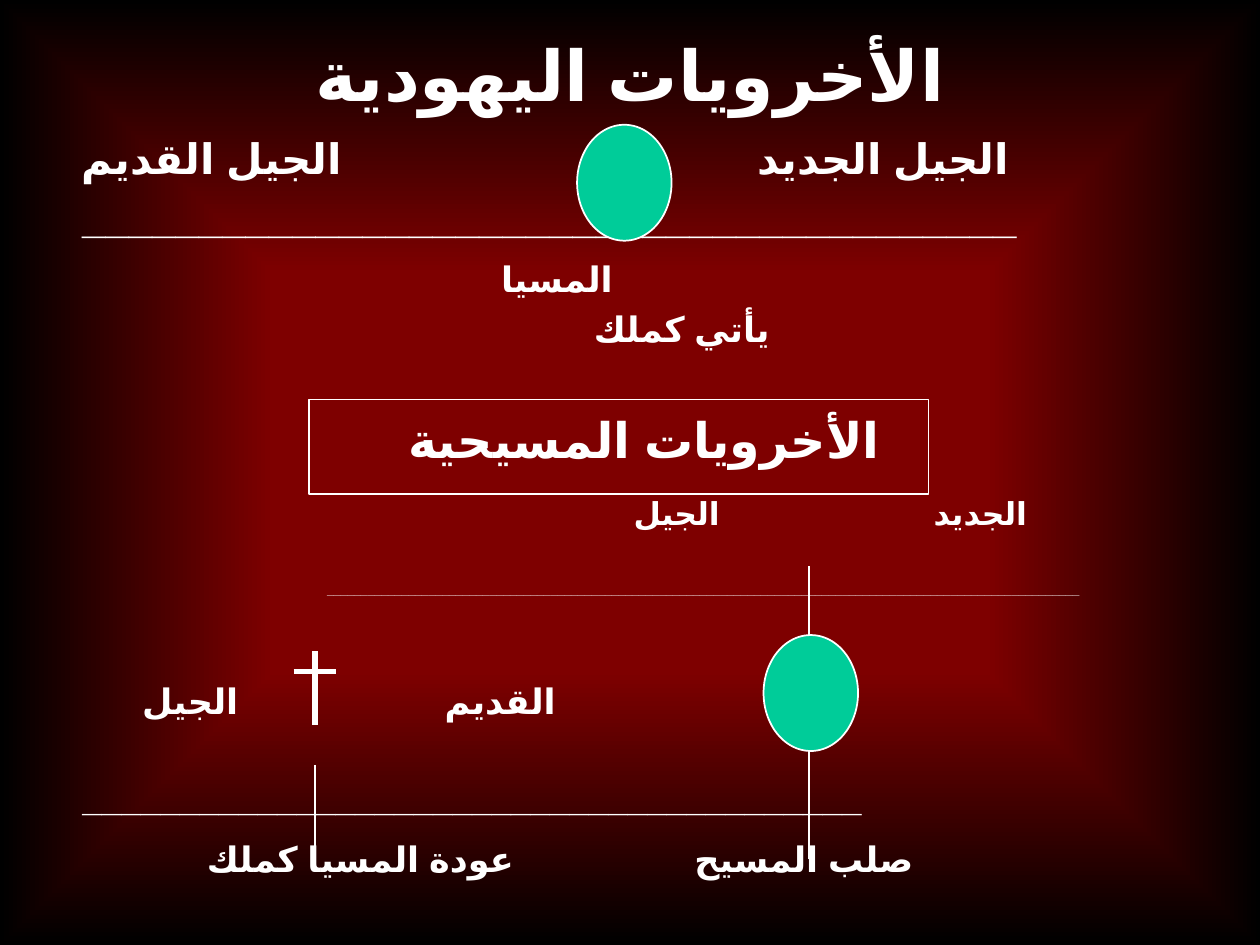
"""Build a slide comparing Jewish and Christian eschatology timelines."""
from lxml.etree import SubElement
from pptx import Presentation
from pptx.dml.color import RGBColor
from pptx.enum.lang import MSO_LANGUAGE_ID
from pptx.enum.shapes import MSO_CONNECTOR, MSO_SHAPE
from pptx.enum.text import MSO_ANCHOR, PP_ALIGN
from pptx.oxml import parse_xml
from pptx.oxml.ns import qn
from pptx.util import Inches, Pt

WHITE, GREEN, RED, BLACK = "FFFFFF", "00CC99", "7E0000", "000000"
FONT = "Arial"
LABEL_WIDTH, WIDE = 4.5, 8.5

TITLE = ("الأخرويات اليهودية", 5, 0.58, 40)
LABELS = [
    ("الجيل القديم", 1.68, 1.25, 24),
    ("الجيل الجديد", 7.01, 1.25, 24),
    ("المسيا", 4.42, 2.21, 20),
    ("يأتي كملك", 5.41, 2.61, 20),
    ("الأخرويات المسيحية", 5.11, 3.48, 28),
    ("الجديد", 7.78, 4.07, 18),
    ("الجيل", 5.37, 4.07, 18),
    ("القديم", 3.97, 5.56, 20),
    ("الجيل", 1.51, 5.56, 20),
    ("صلب المسيح", 6.38, 6.81, 20),
    ("عودة المسيا كملك", 2.86, 6.81, 20),
]
TIMELINES = [
    ("_" * 40, 4.36, 1.72, 24),
    ("_" * 111, 5.58, 4.68, 7),
    ("_" * 40, 3.75, 6.33, 20),
]
CROSS = [(2.33, 5.33, 2.67, 5.33, 3), (2.5, 5.17, 2.5, 5.75, 3)]
EVENT_MARKS = [(6.42, 6.82, 6.42, 4.49, 1), (2.5, 6.07, 2.5, 6.82, 1)]
HEADING_FRAME = (2.45, 3.17, 4.92, 0.75)
MESSIAH_OVALS = [(4.58, 0.99, 0.75, 0.92), (6.06, 5.04, 0.75, 0.92)]


def color(value):
    return RGBColor.from_string(value)


def set_background(slide):
    stops = "".join(
        f'<a:gs pos="{position * 1000}"><a:srgbClr val="{value}"/></a:gs>'
        for position, value in [(0, RED), (42, RED), (100, BLACK)]
    )
    center = 'l="50000" t="50000" r="50000" b="50000"'
    background = parse_xml(
        '<p:bg xmlns:p="http://schemas.openxmlformats.org/presentationml/2006/main"'
        ' xmlns:a="http://schemas.openxmlformats.org/drawingml/2006/main">'
        f'<p:bgPr><a:gradFill rotWithShape="0"><a:gsLst>{stops}</a:gsLst>'
        f'<a:path path="shape"><a:fillToRect {center}/></a:path></a:gradFill>'
        "<a:effectLst/></p:bgPr></p:bg>"
    )
    slide.element.find(qn("p:cSld")).insert(0, background)


def add_label(slide, words, center_x, center_y, size, width=LABEL_WIDTH):
    height = size / 40
    label = slide.shapes.add_textbox(
        Inches(center_x - width / 2), Inches(center_y - height / 2),
        Inches(width), Inches(height),
    )
    frame = label.text_frame
    frame.word_wrap = True
    frame.vertical_anchor = MSO_ANCHOR.MIDDLE
    frame.margin_top = frame.margin_bottom = 0
    paragraph = frame.paragraphs[0]
    paragraph.alignment = PP_ALIGN.CENTER
    paragraph._p.get_or_add_pPr().set("rtl", "1")
    run = paragraph.add_run()
    run.text = words
    font = run.font
    font.name, font.size, font.bold = FONT, Pt(size), True
    font.language_id = MSO_LANGUAGE_ID.ARABIC
    font.color.rgb = color(WHITE)
    SubElement(run._r.get_or_add_rPr(), qn("a:cs"), typeface=FONT)


def add_line(slide, x1, y1, x2, y2, weight):
    line = slide.shapes.add_connector(
        MSO_CONNECTOR.STRAIGHT, *(Inches(value) for value in (x1, y1, x2, y2))
    )
    line.line.color.rgb = color(WHITE)
    line.line.width = Pt(weight)
    SubElement(line._element.spPr, qn("a:effectLst"))


def add_outlined(slide, preset, box, fill=None):
    outlined = slide.shapes.add_shape(preset, *(Inches(value) for value in box))
    outlined.shadow.inherit = False
    if fill:
        outlined.fill.solid()
        outlined.fill.fore_color.rgb = color(fill)
    else:
        outlined.fill.background()
    outlined.line.color.rgb = color(WHITE)
    outlined.line.width = Pt(1)


def main():
    deck = Presentation()
    deck.slide_width, deck.slide_height = Inches(10), Inches(7.5)
    slide = deck.slides.add_slide(deck.slide_layouts[6])
    set_background(slide)
    for label in LABELS:
        add_label(slide, *label)
    for wide_text in [TITLE] + TIMELINES:
        add_label(slide, *wide_text, width=WIDE)
    for line in CROSS + EVENT_MARKS:
        add_line(slide, *line)
    add_outlined(slide, MSO_SHAPE.RECTANGLE, HEADING_FRAME)
    for oval in MESSIAH_OVALS:
        add_outlined(slide, MSO_SHAPE.OVAL, oval, GREEN)
    deck.save("out.pptx")


if __name__ == "__main__":
    main()
